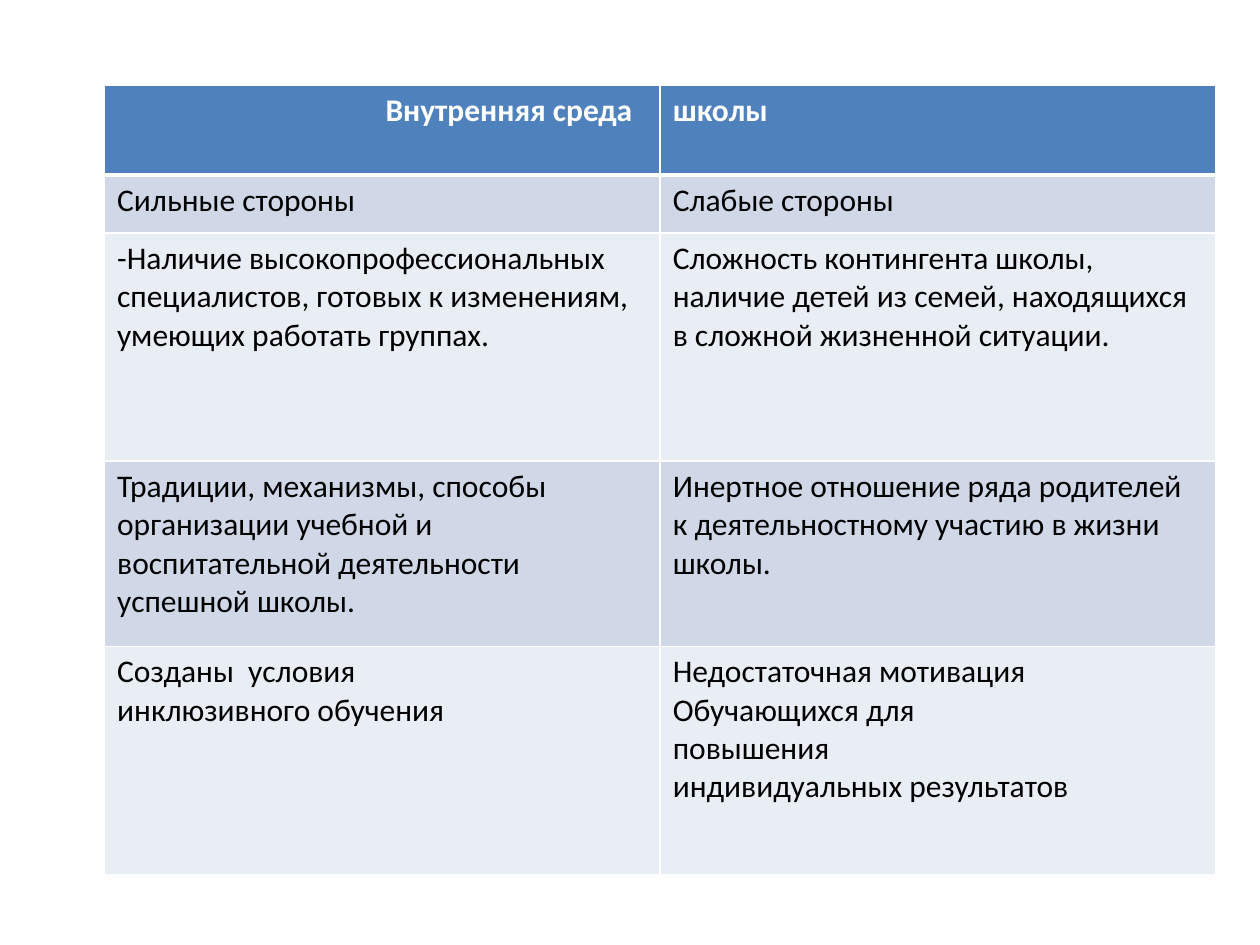
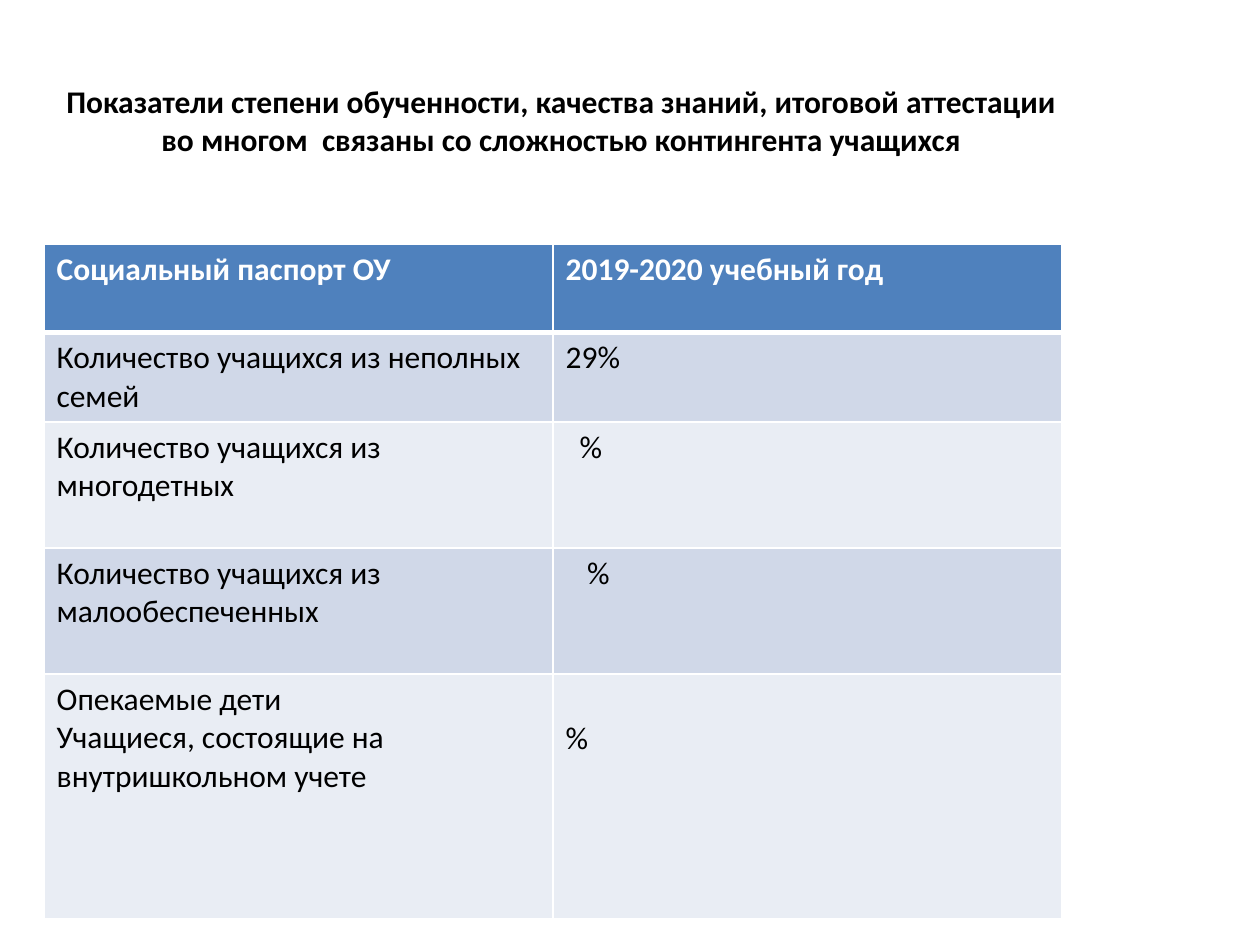
from dataclasses import dataclass, field

from lxml import etree
from pptx import Presentation
from pptx.dml.color import RGBColor
from pptx.enum.text import MSO_ANCHOR, MSO_AUTO_SIZE, PP_ALIGN
from pptx.oxml.ns import qn
from pptx.util import Inches, Pt

CENTER, RIGHT = PP_ALIGN.CENTER, PP_ALIGN.RIGHT
TOP = MSO_ANCHOR.TOP
NO_AUTOFIT = MSO_AUTO_SIZE.NONE

FONT, SIZE = "Calibri", 18
WHITE, BLACK = "FFFFFF", "000000"
HEADER, BANDS = "4F81BD", ("D0D8E8", "E9EDF4")
TITLE_ONLY, BLANK = 5, 6


@dataclass
class Entry:
    text: str
    align: PP_ALIGN | None = None
    left: float = 0.1
    right: float = 0.1
    top: float = 0.05


@dataclass
class TableSpec:
    left: float
    top: float
    col_width: float
    heights: list[float]
    rows: list[tuple[str | Entry, str | Entry]] = field(default_factory=list)


ENVIRONMENT = TableSpec(0.83, 0.68, 4.41, [0.71, 0.46, 1.81, 1.47, 1.81], [
    (Entry("Внутренняя среда", RIGHT, right=0.22), "школы"),
    ("Сильные стороны", "Слабые стороны"),
    ("-Наличие высокопрофессиональных специалистов, готовых к изменениям, умеющих работать группах.",
     "Сложность контингента школы, наличие детей из семей, находящихся в сложной жизненной ситуации."),
    ("Традиции, механизмы, способы организации учебной и воспитательной деятельности успешной школы.",
     "Инертное отношение ряда родителей к деятельностному участию в жизни школы."),
    ("Созданы  условия\nинклюзивного обучения",
     "Недостаточная мотивация\nОбучающихся для\nповышения\nиндивидуальных результатов"),
])

PASSPORT = TableSpec(0.35, 1.94, 4.04, [0.7, 0.7, 1.0, 1.0, 1.94], [
    ("Социальный паспорт ОУ", "2019-2020 учебный год"),
    ("Количество учащихся из неполных семей", "29%"),
    ("Количество учащихся из многодетных", Entry("%", left=0.21)),
    ("Количество учащихся из малообеспеченных", Entry("%", left=0.27)),
    ("Опекаемые дети\nУчащиеся, состоящие на внутришкольном учете", Entry("%", top=0.36)),
])


def rgb(color: str) -> RGBColor:
    return RGBColor.from_string(color)


def format_text(tf, color: str, bold: bool, align: PP_ALIGN | None = None) -> None:
    for p in tf.paragraphs:
        p.alignment = align
        for r in p.runs:
            r.font.name, r.font.size, r.font.bold = FONT, Pt(SIZE), bold
            r.font.color.rgb = rgb(color)


def set_borders(cell, top: float, bottom: float) -> None:
    widths = {"a:lnL": 1, "a:lnR": 1, "a:lnT": top, "a:lnB": bottom}
    tc_pr = cell._tc.get_or_add_tcPr()
    for i, (tag, width) in enumerate(widths.items()):
        ln = etree.Element(qn(tag), w=str(Pt(width)))
        fill = etree.SubElement(ln, qn("a:solidFill"))
        etree.SubElement(fill, qn("a:srgbClr"), val=WHITE)
        tc_pr.insert(i, ln)


def fill_cell(cell, entry: Entry, row: int) -> None:
    header = row == 0
    cell.text_frame.text = entry.text
    format_text(cell.text_frame, WHITE if header else BLACK, header, entry.align)
    cell.margin_left, cell.margin_right = Inches(entry.left), Inches(entry.right)
    cell.margin_top = Inches(entry.top)
    cell.fill.solid()
    cell.fill.fore_color.rgb = rgb(HEADER if header else BANDS[(row - 1) % 2])
    set_borders(cell, top=3 if row == 1 else 1, bottom=3 if header else 1)


def add_grid(s, spec: TableSpec) -> None:
    cols = len(spec.rows[0])
    table = s.shapes.add_table(
        len(spec.rows), cols, Inches(spec.left), Inches(spec.top),
        Inches(spec.col_width * cols), Inches(sum(spec.heights))).table
    for col in table.columns:
        col.width = Inches(spec.col_width)
    for i, (height, entries) in enumerate(zip(spec.heights, spec.rows)):
        table.rows[i].height = Inches(height)
        for j, entry in enumerate(entries):
            fill_cell(table.cell(i, j), entry if isinstance(entry, Entry) else Entry(entry), i)


def set_title(s, text: str) -> None:
    sp = s.shapes.title
    sp.left, sp.top, sp.width, sp.height = map(Inches, (0.28, 0.6, 8.35, 1.31))
    tf = sp.text_frame
    tf.text = text
    tf.word_wrap, tf.auto_size, tf.vertical_anchor = True, NO_AUTOFIT, TOP
    format_text(tf, BLACK, True, CENTER)


def main() -> None:
    prs = Presentation()
    prs.slide_width, prs.slide_height = Inches(10), Inches(7.5)

    s = prs.slides.add_slide(prs.slide_layouts[BLANK])
    add_grid(s, ENVIRONMENT)

    s = prs.slides.add_slide(prs.slide_layouts[TITLE_ONLY])
    set_title(s, "Показатели степени обученности, качества знаний, итоговой аттестации "
                 "во многом  связаны со сложностью контингента учащихся")
    add_grid(s, PASSPORT)

    prs.save("out.pptx")


if __name__ == "__main__":
    main()
